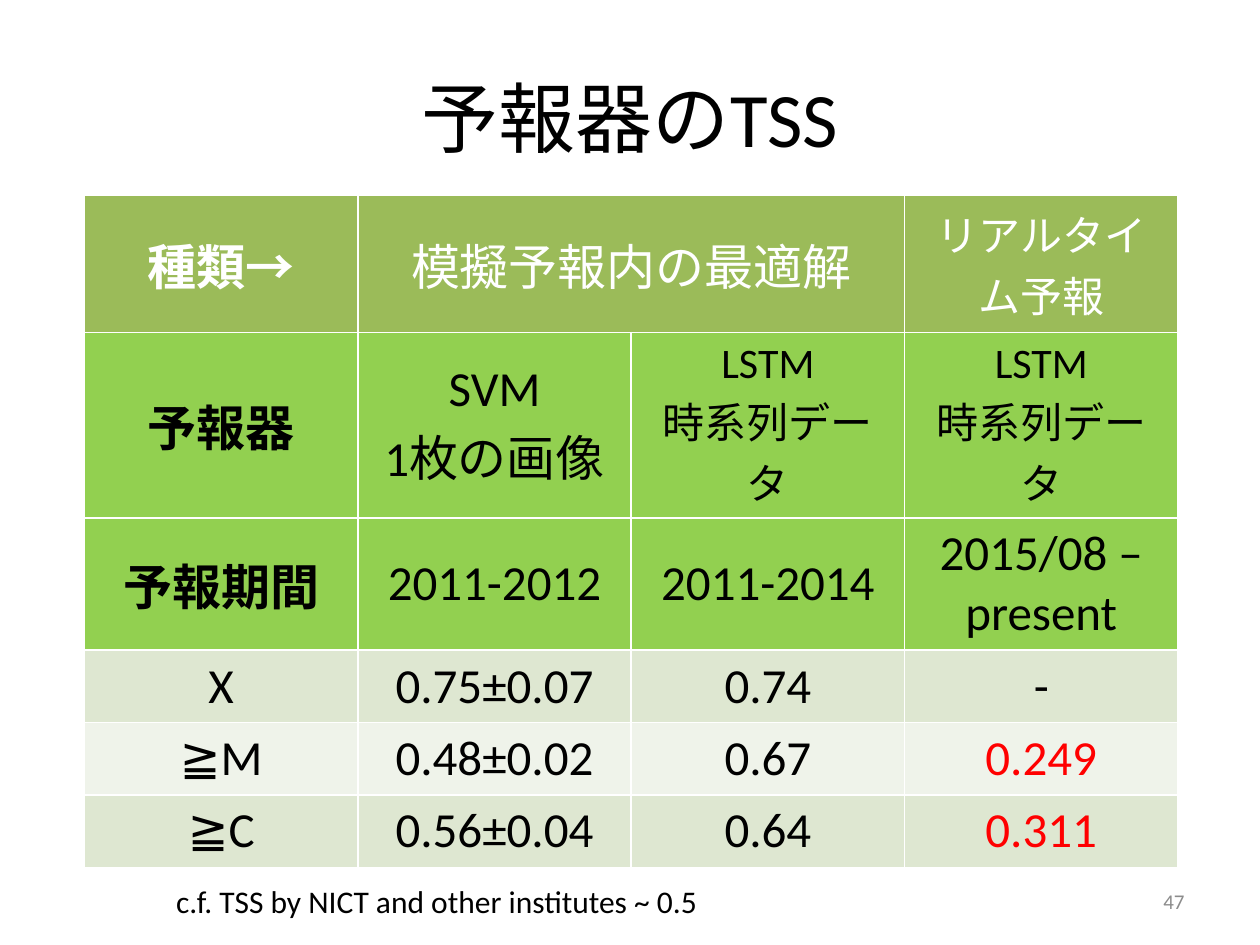
from lxml import etree
from pptx import Presentation
from pptx import util as u
from pptx.dml.color import RGBColor
from pptx.enum import text
from pptx.oxml.ns import qn

W, H = 10, 7.5
C = {"black": "000000", "white": "FFFFFF", "red": "FF0000", "gray": "8C8C8C",
     "head": "9BBB59", "label": "92D050", "band": "DEE7D1", "pale": "EFF3EA"}
ROWS = [
    ["種類→", "模擬予報内の最適解", "", "リアルタイム予報"],
    ["予報器", "SVM\n1枚の画像", "LSTM\n時系列データ", "LSTM\n時系列データ"],
    ["予報期間", "2011-2012", "2011-2014", "2015/08 – present"],
    ["X", "0.75±0.07", "0.74", "-"],
    ["≧M", "0.48±0.02", "0.67", "0.249"],
    ["≧C", "0.56±0.04", "0.64", "0.311"],
]
HEIGHTS = [1.09, 1.47, 1.05, 0.575, 0.575, 0.575]
FILLS = ["head", "label", "label", "band", "pale", "band"]
SMALL = {(0, 3), (1, 2), (1, 3)}
RED = {(4, 3), (5, 3)}


def write(tf, content, size=28, color="black", bold=False, align="CENTER"):
    for i, line in enumerate(content.split("\n")):
        p = tf.paragraphs[0] if i == 0 else tf.add_paragraph()
        p.alignment = getattr(text.PP_ALIGN, align)
        r = p.add_run()
        r.text = line
        r.font.name = "Calibri"
        r.font.size = u.Pt(size)
        r.font.bold = bold
        r.font.color.rgb = RGBColor.from_string(C[color])


def add_text(s, box, content, anchor="MIDDLE", wrap=True, **fmt):
    tf = s.shapes.add_textbox(*map(u.Inches, box)).text_frame
    tf.word_wrap = wrap
    tf.vertical_anchor = getattr(text.MSO_ANCHOR, anchor)
    if not wrap:
        tf.auto_size = text.MSO_AUTO_SIZE.SHAPE_TO_FIT_TEXT
    write(tf, content, **fmt)


def set_borders(cell, pt=1):
    pr = cell._tc.get_or_add_tcPr()
    for i, side in enumerate("LRTB"):
        ln = etree.Element(qn(f"a:ln{side}"), w=str(u.Pt(pt)))
        fill = etree.SubElement(ln, qn("a:solidFill"))
        etree.SubElement(fill, qn("a:srgbClr"), val=C["white"])
        pr.insert(i, ln)


def add_scores(s, box):
    n = len(ROWS[0])
    tbl = s.shapes.add_table(len(ROWS), n, *map(u.Inches, box)).table
    for col in tbl.columns:
        col.width = u.Inches(box[2] / n)
    for i, (row, height) in enumerate(zip(ROWS, HEIGHTS)):
        tbl.rows[i].height = u.Inches(height)
        for j, content in enumerate(row):
            cell = tbl.cell(i, j)
            cell.fill.solid()
            cell.fill.fore_color.rgb = RGBColor.from_string(C[FILLS[i]])
            set_borders(cell)
            if i < 3:
                cell.vertical_anchor = text.MSO_ANCHOR.MIDDLE
            if content:
                color = "white" if i == 0 else "red" if (i, j) in RED else "black"
                write(cell.text_frame, content, size=24 if (i, j) in SMALL else 28,
                      color=color, bold=j == 0 and i < 3)
    tbl.cell(0, 1).merge(tbl.cell(0, 2))


def add_footer(s, box):
    x, y, w, h = box
    number_w = 2.33
    add_text(s, (x + w - number_w, y, number_w, h), "47",
             size=12, color="gray", align="RIGHT")
    add_text(s, (x, y, 4.39, h), "c.f. TSS by NICT and other institutes ~ 0.5",
             anchor="TOP", wrap=False, size=18, align="LEFT")


def main():
    prs = Presentation()
    prs.slide_width, prs.slide_height = u.Inches(W), u.Inches(H)
    s = prs.slides.add_slide(prs.slide_layouts[6])
    add_text(s, (0.05 * W, 0.04 * H, 0.9 * W, H / 6), "予報器のTSS", size=44)
    add_scores(s, (0.67, 1.55, 8.68, sum(HEIGHTS)))
    add_footer(s, (1.3, 6.95, 8.2, 0.4))
    prs.save("out.pptx")


if __name__ == "__main__":
    main()
